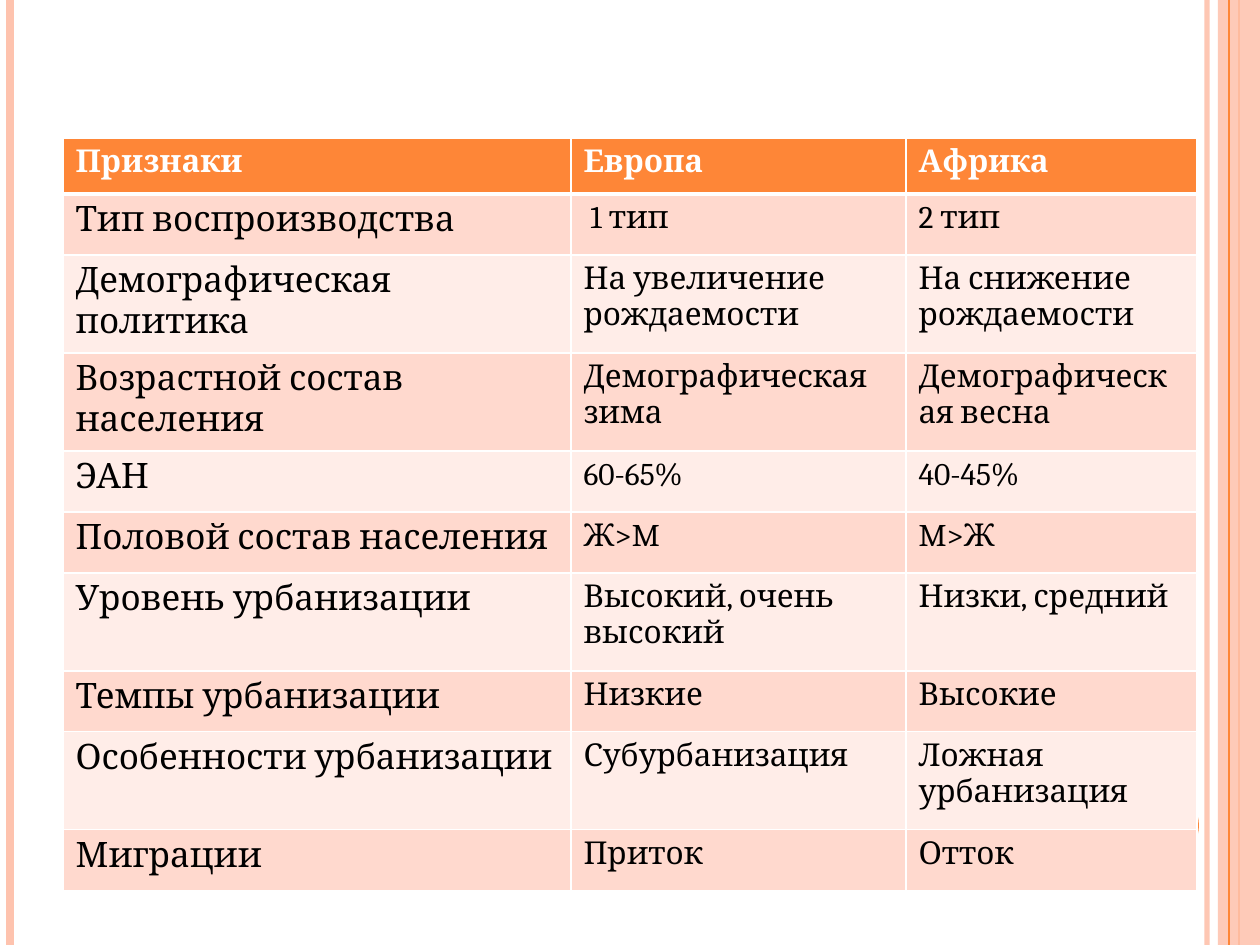
from dataclasses import dataclass

from lxml import etree
from pptx import Presentation
from pptx.dml.color import RGBColor
from pptx.enum.shapes import MSO_CONNECTOR, MSO_SHAPE
from pptx.oxml.ns import qn
from pptx.util import Emu, Pt

STRAIGHT = MSO_CONNECTOR.STRAIGHT
RECTANGLE = MSO_SHAPE.RECTANGLE
OVAL = MSO_SHAPE.OVAL
PX = 914400 // 126


@dataclass(frozen=True)
class Theme:
    font: str = "Cambria"
    accent: str = "FE8637"
    stripe: str = "FEC3AE"
    bands: tuple = ("FFD9CE", "FFEDE8")
    white: str = "FFFFFF"
    black: str = "000000"
    label_size: int = 20
    value_size: int = 18


theme = Theme()


def paint(fill, color, alpha=100):
    fill.solid()
    fill.fore_color.rgb = RGBColor.from_string(color)
    if alpha < 100:
        for clr in fill._xPr.iter(qn("a:srgbClr")):
            etree.SubElement(clr, qn("a:alpha"), val=str(alpha * 1000))


def add_border(cell, side, width):
    ln = etree.SubElement(cell._tc.get_or_add_tcPr(), qn(f"a:ln{side}"), w=str(Pt(width)))
    fill = etree.SubElement(ln, qn("a:solidFill"))
    etree.SubElement(fill, qn("a:srgbClr"), val=theme.white)


prs = Presentation()
prs.slide_width = Emu(1260 * PX)
prs.slide_height = Emu(945 * PX)
s = prs.slides.add_slide(prs.slide_layouts[6])
paint(s.background.fill, theme.white)

decor = [
    ("line", 1207, 3, theme.stripe, 93),
    ("line", 10, 4.5, theme.stripe, 100),
    ("line", 1239, 1.5, theme.accent, 100),
    (RECTANGLE, (1218, 0, 42, 945), None, theme.stripe, 87),
    ("line", 1229, 0.75, theme.accent, 100),
    (OVAL, (1124, 788, 75, 75), None, theme.accent, 100),
]
for kind, place, width, color, alpha in decor:
    if kind == "line":
        sp = s.shapes.add_connector(STRAIGHT, place * PX, 0, place * PX, 945 * PX)
        sp.line.width = Pt(width)
        paint(sp.line.fill, color, alpha)
        etree.SubElement(sp._element.spPr, qn("a:effectLst"))
    else:
        sp = s.shapes.add_shape(kind, *(v * PX for v in place))
        sp.shadow.inherit = False
        sp.line.fill.background()
        paint(sp.fill, color, alpha)

rows = [
    ("Признаки", "Европа", "Африка"),
    ("Тип воспроизводства", " 1 тип", "2 тип"),
    ("Демографическая политика", "На увеличение рождаемости", "На снижение рождаемости"),
    ("Возрастной состав населения", "Демографическая зима", "Демографическая весна"),
    ("ЭАН", "60-65%", "40-45%"),
    ("Половой состав населения", "Ж>M", "M>Ж"),
    ("Уровень урбанизации", "Высокий, очень высокий", "Низки, средний"),
    ("Темпы урбанизации", "Низкие", "Высокие"),
    ("Особенности урбанизации", "Субурбанизация", "Ложная урбанизация"),
    ("Миграции", "Приток", "Отток"),
]
col_widths = [508, 335, 291]
header_height, short, tall = 56, 61, 98
tall_rows = {2, 3, 6, 8}
row_heights = [header_height] + [tall if i in tall_rows else short for i in range(1, len(rows))]

table = s.shapes.add_table(
    len(rows), len(col_widths), 63 * PX, 138 * PX, sum(col_widths) * PX, sum(row_heights) * PX
).table
for column, width in zip(table.columns, col_widths):
    column.width = Emu(width * PX)

for i, (texts, height) in enumerate(zip(rows, row_heights)):
    header = i == 0
    table.rows[i].height = Emu(height * PX)
    for j, text in enumerate(texts):
        cell = table.cell(i, j)
        for side in "LRTB":
            thick = (header and side == "B") or (i == 1 and side == "T")
            add_border(cell, side, 3 if thick else 1)
        paint(cell.fill, theme.accent if header else theme.bands[(i - 1) % 2])
        p = cell.text_frame.paragraphs[0]
        r = p.add_run()
        r.text = text
        r.font.name = theme.font
        r.font.size = Pt(theme.label_size if j == 0 and not header else theme.value_size)
        r.font.bold = header
        r.font.color.rgb = RGBColor.from_string(theme.white if header else theme.black)

prs.save("out.pptx")
